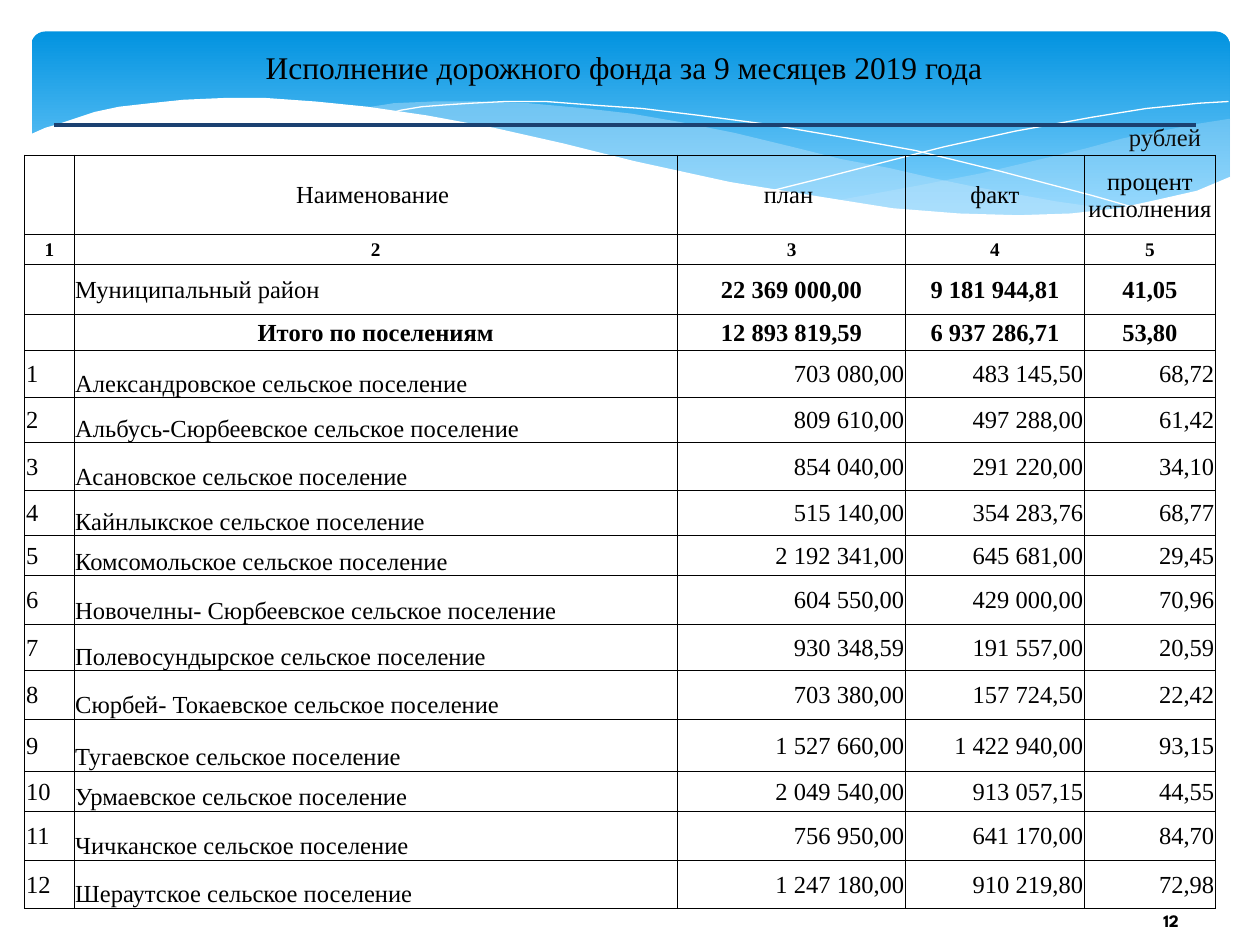
from lxml.etree import SubElement
from pptx import Presentation
from pptx.dml.color import RGBColor
from pptx.enum.shapes import MSO_CONNECTOR, MSO_SHAPE
from pptx.enum.text import MSO_ANCHOR, MSO_AUTO_SIZE, PP_ALIGN
from pptx.oxml.ns import qn
from pptx.util import Pt

SERIF = "Times New Roman"
TITLE = "Исполнение дорожного фонда за 9 месяцев 2019 года"
HEADINGS = ["", "Наименование ", "план ", "факт", "процент исполнения"]
TOTALS = [
    ("", "Муниципальный район", "22 369 000,00", "9 181 944,81", "41,05"),
    ("", "Итого по поселениям", "12 893 819,59", "6 937 286,71", "53,80"),
]
SETTLEMENTS = [
    ("Александровское", "703 080,00", "483 145,50", "68,72"),
    ("Альбусь-Сюрбеевское", "809 610,00", "497 288,00", "61,42"),
    ("Асановское", "854 040,00", "291 220,00", "34,10"),
    ("Кайнлыкское", "515 140,00", "354 283,76", "68,77"),
    ("Комсомольское", "2 192 341,00", "645 681,00", "29,45"),
    ("Новочелны- Сюрбеевское", "604 550,00", "429 000,00", "70,96"),
    ("Полевосундырское", "930 348,59", "191 557,00", "20,59"),
    ("Сюрбей- Токаевское", "703 380,00", "157 724,50", "22,42"),
    ("Тугаевское", "1 527 660,00", "1 422 940,00", "93,15"),
    ("Урмаевское", "2 049 540,00", "913 057,15", "44,55"),
    ("Чичканское", "756 950,00", "641 170,00", "84,70"),
    ("Шераутское", "1 247 180,00", "910 219,80", "72,98"),
]
COLUMN_WIDTHS = [28.1, 344.9, 130.3, 102.2, 74.9]
ROW_HEIGHTS = [45.4, 17.1, 28.3, 20.9, 26.9, 25.7, 27.4, 25.7,
               22.9, 28, 26.3, 28, 29.7, 22.9, 28, 27.4]

RIGHT_WAVE = [
    (702, 67.7), (682.6, 71.3), (663, 74.9), (641.5, 79.2), (620, 85), (599, 90),
    (561, 98.6), (525, 105.8), (476, 115.2), (507.6, 118.8), (536.4, 121.7),
    (562, 123.1), (586, 123.8), (608, 123.1), (628, 121.7), (646, 118.8),
    (663, 115.2), (678, 110.9), (693.4, 105.8), (702.7, 101.5), (702.7, 67.7)]
MIDDLE_WAVE = [
    (643, 120.2), (623.5, 118.1), (602.6, 115.2), (581, 110.9), (558, 107.3),
    (533.5, 102.2), (508, 96.5), (481, 90.7), (453, 83.5), (420.5, 76.3),
    (389.5, 69.8), (360.7, 65.2), (334.8, 61.9), (302.4, 59), (273.6, 57.6),
    (247.7, 58.3), (225.4, 59), (206, 61.9), (232.6, 65.5), (260.6, 69.8),
    (291, 76.3), (323.3, 83.5), (353.5, 90.7), (381.6, 97.2), (420.5, 105.1),
    (456.5, 112.3), (489.6, 117.4), (520, 121), (548, 123.1), (573, 124.6),
    (596, 124.6), (617, 123.1), (643, 120.2)]
FALLING_CURVE = [
    (222.5, 64.8), (229, 63.4), (241.2, 61.2), (254.2, 60.5), (269.3, 59),
    (288.7, 58.3), (311.8, 58.3), (337.7, 59.8), (367.2, 61.9), (400.3, 65.5),
    (437.8, 70.6), (478.8, 77.8), (523.4, 86.4), (572.4, 97.9), (625, 111.6),
    (653, 119.5)]
RISING_CURVE = [
    (441.4, 108.7), (469.4, 101.5), (500.4, 93.6), (538.6, 84.2), (580.3, 74.9),
    (623.5, 67), (655.2, 61.9), (684.7, 59), (702, 57.6)]
WHITE_WAVE = [
    (703.4, 101), (684, 108.7), (662.4, 114.5), (639.4, 119), (612, 122.4),
    (582.5, 123.1), (548, 122.4), (510, 118.8), (466, 112.3), (417, 103.7),
    (362, 92.2), (322, 82.1), (281.5, 73.4), (244, 66.2), (210, 61.2),
    (180, 58.5), (152, 56.4), (127.5, 56.2), (105, 57.2), (85.7, 59),
    (68.4, 61.2), (54, 64.1), (42.5, 67.7), (33, 70.6), (26, 73.4), (16.6, 77),
    (16.6, 161.3), (703.4, 161.3)]


def colour(code):
    """Turn a hex string into a colour."""
    return RGBColor.from_string(code)


def set_text(frame, text, size, align, font=SERIF, code="000000", bold=False):
    """Write one formatted paragraph, sizing it even when it is empty."""
    frame.text = text
    para = frame.paragraphs[0]
    para.alignment = align
    if not text:
        SubElement(para._p, qn("a:endParaRPr"), sz=str(size * 100))
    for span in para.runs:
        span.font.name = font
        span.font.size = Pt(size)
        span.font.bold = bold
        span.font.color.rgb = colour(code)


def add_outline(page, points, closed):
    """Draw straight segments through points given in points of length."""
    builder = page.shapes.build_freeform(*points[0], scale=Pt(1))
    builder.add_line_segments(points[1:], close=closed)
    shape = builder.convert_to_shape()
    shape.shadow.inherit = False
    return shape


def add_wave(page, points, code, opacity=100):
    """Add a filled wave, transparent when opacity is below 100."""
    wave = add_outline(page, points, True)
    wave.fill.solid()
    wave.fill.fore_color.rgb = colour(code)
    wave.line.fill.background()
    if opacity < 100:
        tint = wave.element.find(".//" + qn("a:srgbClr"))
        SubElement(tint, qn("a:alpha"), val=str(opacity * 1000))


def add_curve(page, points):
    """Add a white hairline."""
    curve = add_outline(page, points, False)
    curve.fill.background()
    curve.line.color.rgb = colour("FFFFFF")
    curve.line.width = Pt(0)


def add_backdrop(page):
    """Draw the gradient panel and the waves over it."""
    panel = page.shapes.add_shape(
        MSO_SHAPE.ROUNDED_RECTANGLE, Pt(18), Pt(18), Pt(684.7), Pt(112.3))
    panel.adjustments[0] = 0.07
    panel.shadow.inherit = False
    panel.line.fill.background()
    panel.fill.gradient()
    panel.fill.gradient_angle = 270
    for stop, position, code in zip(
            panel.fill.gradient_stops, (0, 0.9), ("0293E0", "83D3FE")):
        stop.position = position
        stop.color.rgb = colour(code)
    add_wave(page, RIGHT_WAVE, "C6E7FC", 29)
    add_wave(page, MIDDLE_WAVE, "C6E7FC", 40)
    add_curve(page, FALLING_CURVE)
    add_curve(page, RISING_CURVE)
    add_wave(page, WHITE_WAVE, "FFFFFF")


def add_label(page, text, left, top, width, height, size, **look):
    """Add a text box and return its frame."""
    frame = page.shapes.add_textbox(Pt(left), Pt(top), Pt(width), Pt(height)).text_frame
    set_text(frame, text, size, **look)
    return frame


def add_borders(cell):
    """Give a cell thin black lines on all sides."""
    properties = cell._tc.get_or_add_tcPr()
    for index, side in enumerate(("a:lnL", "a:lnR", "a:lnT", "a:lnB")):
        line = properties.makeelement(qn(side), w=str(Pt(0.5)))
        properties.insert(index, line)
        SubElement(SubElement(line, qn("a:solidFill")), qn("a:srgbClr"), val="000000")


def add_fund_table(page):
    """Build the table of planned and actual spending."""
    numbers = [str(number) for number in range(1, len(HEADINGS) + 1)]
    settlements = [(str(number), f"{name} сельское поселение", *values)
                   for number, (name, *values) in enumerate(SETTLEMENTS, 1)]
    rows = [HEADINGS, numbers, *TOTALS, *settlements]
    first_settlement = len(rows) - len(settlements)
    table = page.shapes.add_table(
        len(rows), len(HEADINGS), Pt(14.2), Pt(88.6),
        Pt(sum(COLUMN_WIDTHS)), Pt(sum(ROW_HEIGHTS))).table
    table.first_row = table.horz_banding = False
    for column, width in zip(table.columns, COLUMN_WIDTHS):
        column.width = Pt(width)
    for row_index, (row, height, texts) in enumerate(zip(table.rows, ROW_HEIGHTS, rows)):
        row.height = Pt(height)
        listed = row_index >= first_settlement
        for column_index, (cell, text) in enumerate(zip(row.cells, texts)):
            district = (row_index, column_index) == (2, 1)
            align = PP_ALIGN.CENTER
            if district or listed and column_index < 2:
                align = PP_ALIGN.LEFT
            elif listed:
                align = PP_ALIGN.RIGHT
            cell.margin_left = cell.margin_right = cell.margin_top = Pt(0.7)
            cell.margin_bottom = Pt(0)
            cell.vertical_anchor = (
                MSO_ANCHOR.BOTTOM if listed and column_index == 1 else MSO_ANCHOR.MIDDLE)
            cell.fill.background()
            set_text(cell.text_frame, text, 11 if row_index == 1 else 14, align,
                     bold=0 < row_index < first_settlement and not district)
            add_borders(cell)


def main():
    """Build and save the slide."""
    deck = Presentation()
    deck.slide_width, deck.slide_height = Pt(720), Pt(540)
    page = deck.slides.add_slide(deck.slide_layouts[5])
    add_backdrop(page)

    number = add_label(page, "12", 627.8, 511.9, 82.8, 28.8, 10,
                       align=PP_ALIGN.CENTER, font="League Spartan", bold=True)
    number.word_wrap = True
    number.vertical_anchor = MSO_ANCHOR.MIDDLE

    title = page.shapes.title
    title.left, title.top, title.width, title.height = Pt(25.2), Pt(0), Pt(663), Pt(77)
    title.text_frame.vertical_anchor = MSO_ANCHOR.MIDDLE
    set_text(title.text_frame, TITLE, 18, PP_ALIGN.CENTER)
    page.shapes.element.append(title.element)

    rule = page.shapes.add_connector(
        MSO_CONNECTOR.STRAIGHT, Pt(31), Pt(71.3), Pt(683.3), Pt(71.3))
    rule.line.color.rgb = colour("1B4171")
    rule.line.width = Pt(2.25)
    SubElement(rule.element.spPr, qn("a:effectLst"))

    unit = add_label(page, "рублей", 638, 66.2, 56.2, 24.5, 14,
                     align=PP_ALIGN.LEFT, code="0D0D0D")
    unit.word_wrap = False
    unit.auto_size = MSO_AUTO_SIZE.SHAPE_TO_FIT_TEXT
    add_fund_table(page)
    deck.save("out.pptx")


if __name__ == "__main__":
    main()
